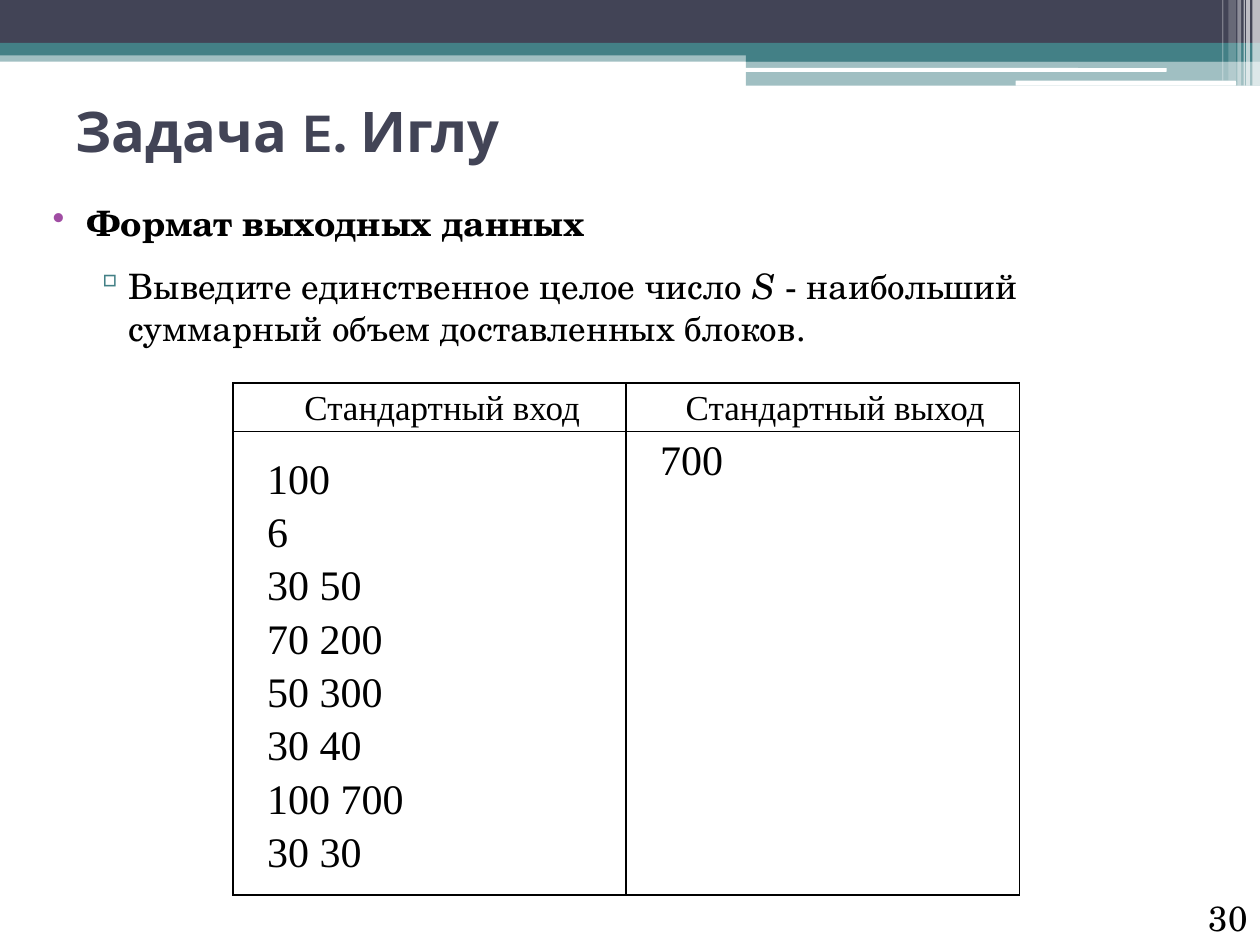
from lxml import etree
from pptx import Presentation
from pptx.dml.color import RGBColor
from pptx.enum import shapes, text
from pptx.oxml import ns
from pptx.util import Inches, Pt

DARK, TEAL, PURPLE, WHITE, BLACK = "424456", "438086", "A04DA3", "FFFFFF", "000000"
SERIF, TABLE_FONT = "TeX Gyre Schola", "Times New Roman"


def rgb(value):
    """Turn a hex string into a colour."""
    return RGBColor.from_string(value)


def add_xml(parent, tag, **attrs):
    """Append a DrawingML element to its parent."""
    return etree.SubElement(parent, ns.qn(tag), attrs)


def style(p, size, font, color=BLACK, bold=False):
    """Set the font of a whole paragraph."""
    p.font.size, p.font.name, p.font.bold = Pt(size), font, bold
    p.font.color.rgb = rgb(color)


def add_bar(slide, box, color, alpha=100, rounded=False):
    """Add a plain bar with the given opacity."""
    kind = shapes.MSO_SHAPE.ROUNDED_RECTANGLE if rounded else shapes.MSO_SHAPE.RECTANGLE
    sp = slide.shapes.add_shape(kind, *map(Inches, box))
    sp.shadow.inherit = False
    sp.line.fill.background()
    sp.fill.solid()
    sp.fill.fore_color.rgb = rgb(color)
    if alpha < 100:
        clr = sp.fill._xPr.find(".//" + ns.qn("a:srgbClr"))
        add_xml(clr, "a:alpha", val=str(alpha * 1000))


def add_header(slide, left, top, width):
    """Draw the banded header with its stripes at the right edge."""
    right, step = left + width, left + 5.92
    add_bar(slide, (left, top + 0.4, width, 0.09), TEAL, 50)
    add_bar(slide, (left, top, width, 0.34), DARK)
    add_bar(slide, (left, top + 0.34, width, 0.1), TEAL)
    add_bar(slide, (step, top + 0.39, right - step, 0.1), TEAL)
    add_bar(slide, (step, top + 0.48, right - step, 0.2), TEAL, 50)
    add_bar(slide, (step - 0.01, top + 0.54, 3.35, 0.03), WHITE, rounded=True)
    add_bar(slide, (left + 8.06, top + 0.64, 1.75, 0.04), WHITE, rounded=True)
    stripes = [(0.06, 0.06, 0.68, 65), (0.11, 0.03, 0.68, 65), (0.13, 0.01, 0.68, 60),
               (0.18, 0.03, 0.68, 40), (0.25, 0.06, 0.64, 20), (0.3, 0.01, 0.64, 30)]
    for offset, w, h, alpha in stripes:
        add_bar(slide, (right - offset, top, w, h), WHITE, alpha)


def add_text(slide, box, anchor=text.MSO_ANCHOR.TOP):
    """Add a wrapping text box and return its frame."""
    tf = slide.shapes.add_textbox(*map(Inches, box)).text_frame
    tf.word_wrap, tf.vertical_anchor = True, anchor
    return tf


def add_title(slide, box, title):
    """Add the slide title."""
    p = add_text(slide, box, text.MSO_ANCHOR.MIDDLE).paragraphs[0]
    p.text = title
    style(p, 32, "Karla", DARK, True)


def add_bullet(p, char, color, margin, indent):
    """Give a paragraph spacing, a hanging indent and a coloured bullet."""
    p.space_before = p.space_after = Pt(6)
    pPr = p._p.get_or_add_pPr()
    pPr.set("marL", str(Inches(margin)))
    pPr.set("indent", str(Inches(indent)))
    add_xml(add_xml(pPr, "a:buClr"), "a:srgbClr", val=color)
    add_xml(pPr, "a:buChar", char=char)


def add_body(slide, box):
    """Add the output format heading and its description."""
    tf = add_text(slide, box)
    p = tf.paragraphs[0]
    p.text = "Формат выходных данных"
    add_bullet(p, "•", PURPLE, 0.4, -0.28)
    style(p, 20, SERIF, bold=True)
    p = tf.add_paragraph()
    p.level = 1
    for part in ("Выведите единственное целое число ", "S",
                 " - наибольший суммарный объем доставленных блоков."):
        r = p.add_run()
        r.text = part
        r.font.italic = part == "S"
    add_bullet(p, "▫", TEAL, 0.72, -0.27)
    style(p, 20, SERIF)


def fill_cell(cell, content, size, align):
    """Write a cell with thin black borders and indented paragraphs."""
    cell.text = content
    cell.margin_left = cell.margin_right = Inches(0.07)
    cell.margin_top = cell.margin_bottom = 0
    tcPr = cell._tc.get_or_add_tcPr()
    for side in ("a:lnL", "a:lnR", "a:lnT", "a:lnB"):
        ln = add_xml(tcPr, side, w=str(Pt(1)))
        add_xml(add_xml(ln, "a:solidFill"), "a:srgbClr", val=BLACK)
    cell.fill.background()
    for p in cell.text_frame.paragraphs:
        p.alignment, p.line_spacing = align, 1.15
        p._p.get_or_add_pPr().set("indent", str(Inches(0.2)))
        style(p, size, TABLE_FONT)


def add_sample(slide, box):
    """Add the table of sample input and output."""
    rows = [("Стандартный вход", "Стандартный выход"),
            ("100\n6\n30 50\n70 200\n50 300\n30 40\n100 700\n30 30", "700")]
    formats = [(20, text.PP_ALIGN.CENTER), (24, text.PP_ALIGN.JUSTIFY)]
    table = slide.shapes.add_table(2, 2, *map(Inches, box)).table
    table.first_row = table.horz_banding = False
    header = 0.36
    table.rows[0].height = Inches(header)
    table.rows[1].height = Inches(box[3] - header)
    for i, (row, form) in enumerate(zip(rows, formats)):
        for j, content in enumerate(row):
            fill_cell(table.cell(i, j), content, *form)
    table.cell(1, 0).vertical_anchor = text.MSO_ANCHOR.MIDDLE


def add_number(slide, box, number):
    """Add the slide number."""
    p = add_text(slide, box, text.MSO_ANCHOR.BOTTOM).paragraphs[0]
    p.text, p.alignment = number, text.PP_ALIGN.RIGHT
    style(p, 20, SERIF)


def main():
    """Build the slide and save it."""
    prs = Presentation()
    prs.slide_width, prs.slide_height = Inches(10), Inches(7.5)
    slide = prs.slides.add_slide(prs.slide_layouts[6])
    add_header(slide, 0, 0, 10)
    add_title(slide, (0.5, 0.68, 9, 0.71), "Задача E. Иглу")
    add_body(slide, (0.2, 1.55, 9.53, 5.64))
    add_number(slide, (9.17, 7.1, 0.83, 0.4), "30")
    add_sample(slide, (1.85, 3.04, 6.24, 3.75))
    prs.save("out.pptx")


if __name__ == "__main__":
    main()
